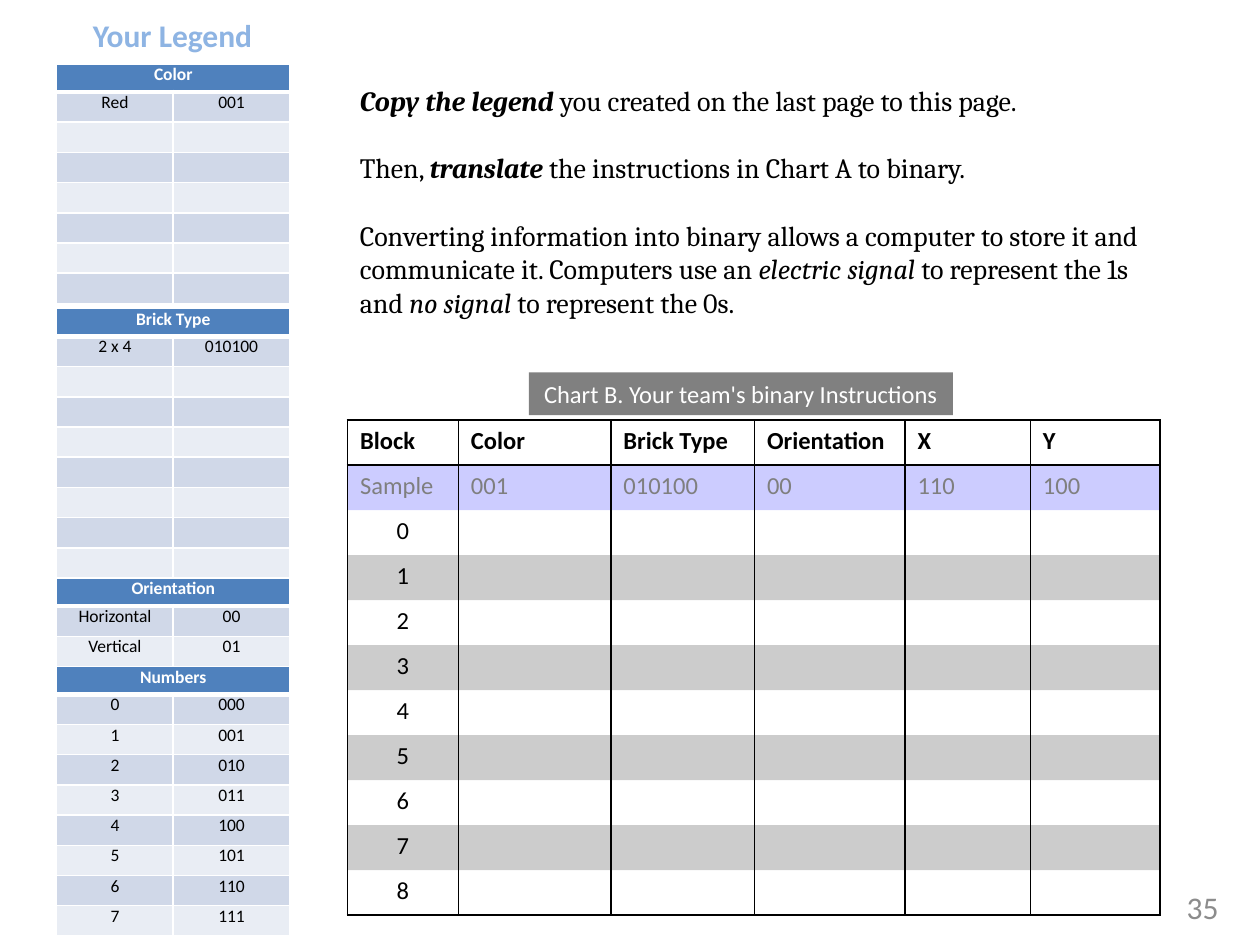
from dataclasses import dataclass

from lxml.etree import SubElement
from pptx import Presentation
from pptx.dml.color import RGBColor
from pptx.enum.shapes import MSO_SHAPE as Shape
from pptx.enum.text import MSO_ANCHOR as Anchor, PP_ALIGN as Align
from pptx.oxml.ns import qn
from pptx.util import Inches, Pt

# The page is a grid of 100 columns and 75 rows of square units.
UNIT = Inches(0.1)
COLUMNS, ROWS = 100, 75

COLORS = {
    "black": "000000", "white": "FFFFFF", "header": "4F81BD",
    "band_dark": "D0D8E8", "band_light": "E9EDF4", "title": "8EB4E3",
    "sample_fill": "0000FF", "sample_text": "7F7F7F",
    "caption": "808080", "page_number": "8C8C8C",
}

LEGEND = [  # heading, filled rows, number of rows, space below
    ("Color", [("Red", "001")], 7, 0.4),
    ("Brick Type", [("2 x 4", "010100")], 8, 0),
    ("Orientation", [("Horizontal", "00"), ("Vertical", "01")], 2, 0),
    ("Numbers", [(str(n), f"{n:03b}") for n in range(8)], 8, 0),
]
LEGEND_HEADER, LEGEND_ROW = 2.2, 2.4

CHART_HEAD = ["Block", "Color", "Brick Type", "Orientation", "X", "Y"]
CHART_SAMPLE = ["Sample", "001", "010100", "00", "110", "100"]
CHART_WIDTHS = [8.8, 12.1, 11.4, 11.95, 9.95, 10.3]
BLOCKS = 9

INSTRUCTIONS = [  # paragraphs of (text, style)
    [("Copy the legend ", "bi"),
     ("you created on the last page to this page.", "")],
    [("Then, ", ""), ("translate", "bi"),
     (" the instructions in Chart A to binary.", "")],
    [("Converting information into binary allows a computer to store it and "
      "communicate it. Computers use an ", ""), ("electric signal", "i"),
     (" to represent the 1s and ", ""), ("no signal", "i"),
     (" to represent the 0s.", "")],
]


@dataclass
class Box:
    """A region of the page, in grid units."""
    left: float
    top: float
    width: float
    height: float

    def lengths(self):
        return [round(n * UNIT) for n in
                (self.left, self.top, self.width, self.height)]


def rgb(name):
    return RGBColor.from_string(COLORS[name])


def add_span(para, text, size, color, style="", font="Calibri"):
    span = para.add_run()
    span.text = text
    span.font.name, span.font.size = font, Pt(size)
    span.font.bold, span.font.italic = "b" in style, "i" in style
    span.font.color.rgb = rgb(color)


def add_text_box(page, box, wrap=True):
    frame = page.shapes.add_textbox(*box.lengths()).text_frame
    frame.word_wrap = wrap
    return frame


def add_grid(page, box, widths, heights):
    table = page.shapes.add_table(
        len(heights), len(widths), *box.lengths()).table
    for column, width in zip(table.columns, widths):
        column.width = round(width * UNIT)
    for row, height in zip(table.rows, heights):
        row.height = round(height * UNIT)
    return table


def set_borders(cell, color, widths):
    """Draw the left, right, top and bottom borders; width 0 hides one."""
    for side, width in zip("LRTB", widths):
        line = SubElement(cell._tc.get_or_add_tcPr(), qn(f"a:ln{side}"),
                          w=str(Pt(width)))
        if width:
            solid = SubElement(line, qn("a:solidFill"))
            SubElement(solid, qn("a:srgbClr"), val=COLORS[color])
        else:
            SubElement(line, qn("a:noFill"))


def set_fill(cell, color, opacity=100):
    if color is None:
        cell.fill.background()
        return
    cell.fill.solid()
    cell.fill.fore_color.rgb = rgb(color)
    if opacity < 100:
        tint = cell._tc.tcPr.find(qn("a:solidFill")).find(qn("a:srgbClr"))
        SubElement(tint, qn("a:alpha"), val=str(opacity * 1000))


def set_cell_text(cell, text, size, color, style="", align=Align.LEFT):
    para = cell.text_frame.paragraphs[0]
    para.alignment = align
    if text:
        add_span(para, text, size, color, style)
    else:  # keeps an empty row from growing
        SubElement(para._p, qn("a:endParaRPr"), sz=str(size * 100))


def draw_legend_table(page, box, heading, entries, count):
    heights = [LEGEND_HEADER] + [LEGEND_ROW] * count
    table = add_grid(page, box, [box.width / 2] * 2, heights)
    table.cell(0, 0).merge(table.cell(0, 1))
    blanks = [("", "")] * (count - len(entries))
    for r, values in enumerate([(heading, ""), *entries, *blanks]):
        head = r == 0
        band = "header" if head else "band_dark" if r % 2 else "band_light"
        top, bottom = (3 if r == 1 else 1), (3 if head else 1)
        for c, value in enumerate(values):
            cell = table.cell(r, c)
            cell.margin_left = cell.margin_right = 0
            cell.margin_top = cell.margin_bottom = 0
            set_borders(cell, "white", (1, 1, top, bottom))
            set_fill(cell, band)
            set_cell_text(cell, value, 10, "white" if head else "black",
                          "b" if head else "", Align.CENTER)


def draw_legend(page, box):
    title_box = Box(box.left + 1.7, box.top, 15, 4)
    para = add_text_box(page, title_box, wrap=False).paragraphs[0]
    para.alignment = Align.CENTER
    add_span(para, "Your Legend", 18, "title", "b")
    top = box.top + 4.3
    for heading, entries, count, gap in LEGEND:
        height = LEGEND_HEADER + LEGEND_ROW * count
        draw_legend_table(page, Box(box.left, top, box.width, height),
                          heading, entries, count)
        top += height + gap


def draw_instructions(page, box):
    frame = add_text_box(page, box)
    for i, parts in enumerate(INSTRUCTIONS):
        para = frame.add_paragraph() if i else frame.paragraphs[0]
        para.space_before = Pt(19.4 if i else 0)
        for text, style in parts:
            add_span(para, text, 16, "black", style, "Cambria")


def draw_caption(page, box):
    label = page.shapes.add_shape(Shape.RECTANGLE, *box.lengths())
    label.shadow.inherit = False
    label.fill.solid()
    label.fill.fore_color.rgb = rgb("caption")
    label.line.fill.background()
    label.text_frame.word_wrap = False
    para = label.text_frame.paragraphs[0]
    para.alignment = Align.CENTER
    add_span(para, "Chart B. Your team's binary Instructions", 14, "white")


def draw_chart_b(page, box):
    draw_caption(page, Box(box.left + 14.4, box.top, 33.65, 3.4))
    blocks = [[str(n)] + [""] * 5 for n in range(BLOCKS)]
    rows = [CHART_HEAD, CHART_SAMPLE, *blocks]
    grid_box = Box(box.left, box.top + 3.8, box.width, box.height - 3.8)
    table = add_grid(page, grid_box, CHART_WIDTHS,
                     [grid_box.height / len(rows)] * len(rows))
    table.first_row = table.horz_banding = False
    for r, values in enumerate(rows):
        head, sample, last = r == 0, r == 1, r == len(rows) - 1
        fill = "sample_fill" if sample else "black" if r > 1 and r % 2 else None
        for c, value in enumerate(values):
            cell = table.cell(r, c)
            set_borders(cell, "black", (1, 1, int(head or sample),
                                        int(head or last)))
            set_fill(cell, fill, 20)
            set_cell_text(cell, value, 14,
                          "sample_text" if sample else "black",
                          "b" if head else "",
                          Align.CENTER if r > 1 else Align.LEFT)


def draw_page_number(page, box):
    frame = add_text_box(page, box)
    frame.vertical_anchor = Anchor.MIDDLE
    frame.paragraphs[0].alignment = Align.RIGHT
    add_span(frame.paragraphs[0], "35", 18, "page_number")


def main():
    deck = Presentation()
    deck.slide_width, deck.slide_height = COLUMNS * UNIT, ROWS * UNIT
    page = deck.slides.add_slide(deck.slide_layouts[6])
    draw_legend(page, Box(4.5, 0.8, 18.5, 73.5))
    draw_instructions(page, Box(27.58, 6.1, 64.5, 19.9))
    draw_chart_b(page, Box(27.58, 29.55, 64.5, 43.1))
    draw_page_number(page, Box(74.4, 70, 23.3, 4))
    deck.save("out.pptx")


if __name__ == "__main__":
    main()
